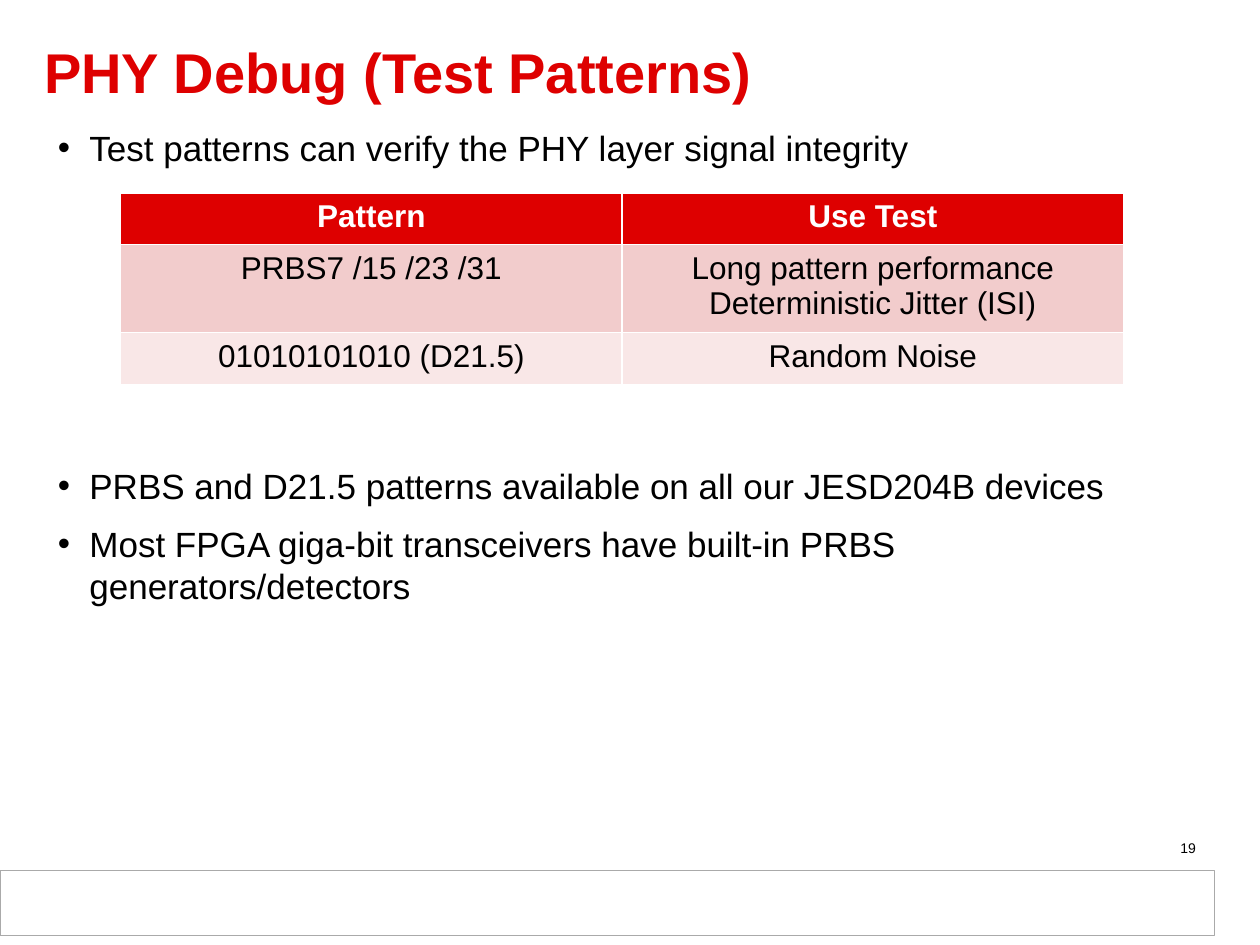
from typing import NamedTuple

from lxml.etree import SubElement
from pptx import Presentation
from pptx.dml.color import RGBColor
from pptx.enum.shapes import MSO_SHAPE as Shape
from pptx.enum.text import MSO_ANCHOR as Anchor, PP_ALIGN as Align
from pptx.oxml.ns import qn
from pptx.util import Pt

RED = RGBColor(0xDE, 0x00, 0x00)
PINK = RGBColor(0xF2, 0xCC, 0xCC)
PALE = RGBColor(0xF9, 0xE7, 0xE7)
GREY = RGBColor(0xAA, 0xAA, 0xAA)
BLACK = RGBColor(0, 0, 0)
WHITE = RGBColor(255, 255, 255)


class Box(NamedTuple):
    left: float
    top: float
    width: float
    height: float


class Point(NamedTuple):
    text: str
    before: float


class Row(NamedTuple):
    cells: tuple[str, str]
    height: float
    fill: RGBColor
    ink: RGBColor = BLACK
    bold: bool = False


TABLE_TOP = 110.2
POINTS = [
    Point("Test patterns can verify the PHY layer signal integrity", 0),
    Point("PRBS and D21.5 patterns available on all our JESD204B devices", 169),
    Point("Most FPGA giga-bit transceivers have built-in PRBS "
          "generators/detectors", 9),
]
ROWS = [
    Row(("Pattern", "Use Test"), 29.5, RED, WHITE, True),
    Row(("PRBS7 /15 /23 /31",
         "Long pattern performance\nDeterministic Jitter (ISI)"), 48, PINK),
    Row(("01010101010 (D21.5)", "Random Noise"), 29.5, PALE),
]


def place(box: Box) -> list:
    return [Pt(side) for side in box]


def style(para, size: float, ink: RGBColor = BLACK, bold: bool = False) -> None:
    font = para.font
    font.name, font.size, font.bold = "Arial", Pt(size), bold
    font.color.rgb = ink


def add_title(slide, text: str, box: Box) -> None:
    title = slide.shapes.title
    title.left, title.top, title.width, title.height = place(box)
    frame = title.text_frame
    frame.text = text
    frame.vertical_anchor = Anchor.MIDDLE
    para = frame.paragraphs[0]
    para.alignment = Align.LEFT
    para.line_spacing = 0.85
    style(para, 32, RED, True)


def add_points(slide, points: list[Point], box: Box) -> None:
    frame = slide.shapes.add_textbox(*place(box)).text_frame
    frame.word_wrap = True
    frame.text = "\n".join(point.text for point in points)
    for para, point in zip(frame.paragraphs, points):
        para.space_before = Pt(point.before)
        props = para._p.get_or_add_pPr()
        props.set("marL", str(Pt(18)))
        props.set("indent", str(-Pt(18)))
        SubElement(props, qn("a:buFont"), typeface="Arial")
        SubElement(props, qn("a:buChar"), char="•")
        style(para, 20)


def add_grid(slide, rows: list[Row], box: Box) -> None:
    table = slide.shapes.add_table(len(rows), 2, *place(box)).table
    for line, row in zip(table.rows, rows):
        line.height = Pt(row.height)
        for cell, text in zip(line.cells, row.cells):
            cell.fill.solid()
            cell.fill.fore_color.rgb = row.fill
            cell.text = text
            for para in cell.text_frame.paragraphs:
                para.alignment = Align.CENTER
                style(para, 18, row.ink, row.bold)


def add_footer(slide, box: Box) -> None:
    bar = slide.shapes.add_shape(Shape.RECTANGLE, *place(box))
    bar.shadow.inherit = False
    bar.fill.solid()
    bar.fill.fore_color.rgb = WHITE
    bar.line.color.rgb = GREY
    bar.line.width = Pt(0.75)


def add_number(slide, text: str, box: Box) -> None:
    frame = slide.shapes.add_textbox(*place(box)).text_frame
    frame.word_wrap = True
    frame.vertical_anchor = Anchor.MIDDLE
    frame.text = text
    para = frame.paragraphs[0]
    para.alignment = Align.RIGHT
    style(para, 8)


def main() -> None:
    deck = Presentation()
    deck.slide_width, deck.slide_height = Pt(720), Pt(540)
    slide = deck.slides.add_slide(deck.slide_layouts[5])
    add_footer(slide, Box(0, 497.5, 694, 37))
    add_title(slide, "PHY Debug (Test Patterns)", Box(18, 11.5, 682, 64))
    add_points(slide, POINTS, Box(26, 69, 659, 403))
    add_number(slide, "19", Box(522.5, 476.5, 168, 16.5))
    height = sum(row.height for row in ROWS)
    add_grid(slide, ROWS, Box(69, TABLE_TOP, 573, height))
    deck.save("out.pptx")


if __name__ == "__main__":
    main()
